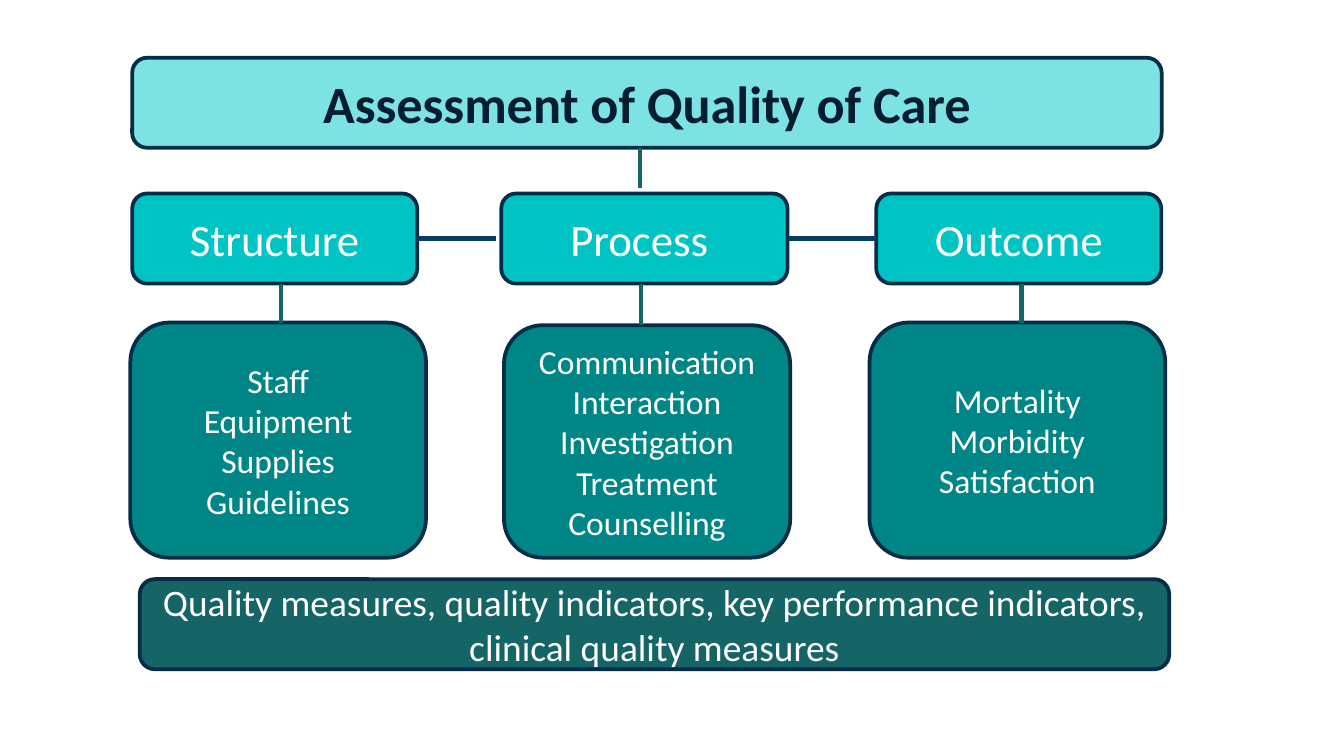
import dataclasses

import pptx
import pptx.dml.color
import pptx.enum.shapes
import pptx.enum.text
import pptx.oxml
import pptx.oxml.ns
import pptx.util

SHAPES = pptx.enum.shapes.MSO_SHAPE
STRAIGHT = pptx.enum.shapes.MSO_CONNECTOR.STRAIGHT
CELL = pptx.util.Inches(0.1)  # the slide is a grid 100 columns wide
LEFT, RIGHT = 1, 3  # connection sites


@dataclasses.dataclass(frozen=True)
class Theme:
    font: str = "Calibri"
    title_fill: str = "7CE2E4"
    heading_fill: str = "00C4C4"
    detail_fill: str = "008686"
    footer_fill: str = "156466"
    outline: str = "052D48"
    branch: str = "156466"
    sequence: str = "073D61"
    dark_text: str = "041E30"
    light_text: str = "FFFFFF"
    title_size: float = 28
    heading_size: float = 24
    footer_size: float = 20
    detail_size: float = 18
    outline_width: float = 2
    connector_width: float = 2.25


THEME = Theme()


def cells(*lengths):
    """Turn grid columns and rows into slide lengths."""
    return [pptx.util.Emu(round(length * CELL)) for length in lengths]


def rgb(color):
    return pptx.dml.color.RGBColor.from_string(color)


def write_text(shape, text, *, size, color=THEME.light_text, bold=False):
    """Write centred text, one paragraph for each line."""
    frame = shape.text_frame
    frame.word_wrap = True
    frame.auto_size = pptx.enum.text.MSO_AUTO_SIZE.NONE
    frame.vertical_anchor = pptx.enum.text.MSO_ANCHOR.MIDDLE
    frame.text = text
    for paragraph in frame.paragraphs:
        paragraph.alignment = pptx.enum.text.PP_ALIGN.CENTER
        for run in paragraph.runs:
            run.font.name = THEME.font
            run.font.size = pptx.util.Pt(size)
            run.font.bold = bold
            run.font.color.rgb = rgb(color)


def add_panel(slide, box, fill):
    """Add a rounded, outlined panel."""
    shape = slide.shapes.add_shape(SHAPES.FLOWCHART_ALTERNATE_PROCESS, *cells(*box))
    shape.shadow.inherit = False
    shape.fill.solid()
    shape.fill.fore_color.rgb = rgb(fill)
    shape.line.color.rgb = rgb(THEME.outline)
    shape.line.width = pptx.util.Pt(THEME.outline_width)
    return shape


def add_line(slide, start, end, color):
    connector = slide.shapes.add_connector(STRAIGHT, *cells(*start, *end))
    connector.line.color.rgb = rgb(color)
    connector.line.width = pptx.util.Pt(THEME.connector_width)
    properties = connector._element.spPr
    properties.append(pptx.oxml.parse_xml(
        f"<a:effectLst {pptx.oxml.ns.nsdecls('a')}/>"))
    return connector


def add_title(slide, box, text):
    """Set the title placeholder on a panel of the same size."""
    add_panel(slide, box, THEME.title_fill)
    title = slide.shapes.title
    title.left, title.top, title.width, title.height = cells(*box)
    write_text(title, text, size=THEME.title_size, color=THEME.dark_text, bold=True)
    slide.shapes._spTree.append(title._element)  # bring in front of the panel


def add_column(slide, heading_box, detail_box, branch_x, heading, details):
    """Add a heading, its detail panel and the branch between them."""
    heading_panel = add_panel(slide, heading_box, THEME.heading_fill)
    write_text(heading_panel, heading, size=THEME.heading_size)
    detail_panel = add_panel(slide, detail_box, THEME.detail_fill)
    write_text(detail_panel, details, size=THEME.detail_size)
    heading_bottom = heading_box[1] + heading_box[3]
    add_line(slide, (branch_x, heading_bottom), (branch_x, detail_box[1]), THEME.branch)
    return heading_panel


def add_sequence(slide, structure, process, outcome):
    """Join the three headings from left to right."""
    first = add_line(slide, (31, 17.75), (36.9, 17.75), THEME.sequence)
    first.begin_connect(structure, RIGHT)
    second = add_line(slide, (58.6, 17.75), (65.2, 17.75), THEME.sequence)
    second.begin_connect(process, RIGHT)
    second.end_connect(outcome, LEFT)


def add_footer(slide, box, text):
    write_text(add_panel(slide, box, THEME.footer_fill), text, size=THEME.footer_size)


def main():
    presentation = pptx.Presentation()
    presentation.slide_width = 100 * CELL
    presentation.slide_height = presentation.slide_width * 9 // 16
    slide = presentation.slides.add_slide(presentation.slide_layouts.get_by_name("Title Only"))

    # Title and its branch
    bar_width, bar_height, heading_top = 76.6, 6.7, 14.4
    add_title(slide, (9.84, 4.3, bar_width, bar_height), "Assessment of Quality of Care")
    add_line(slide, (47.6, 11), (47.6, 14), THEME.branch)

    # Columns: heading left and width, detail box, branch, texts
    columns = [
        (9.84, 21.2, (9.7, 24, 22, 17.5), 20.9, "Structure",
         "Staff\nEquipment\nSupplies\nGuidelines"),
        (37.3, 21.3, (37.5, 24.2, 21.3, 17.3), 47.7, "Process ",
         "Communication\nInteraction\nInvestigation\nTreatment\nCounselling"),
        (65.2, 21.2, (64.7, 24, 22, 17.5), 76, "Outcome",
         "Mortality Morbidity\nSatisfaction"),
    ]
    headings = [
        add_column(slide, (left, heading_top, width, bar_height), detail_box, branch_x,
                   heading, details)
        for left, width, detail_box, branch_x, heading, details in columns
    ]
    add_sequence(slide, *headings)

    # Footer
    add_footer(slide, (10.4, 43.1, bar_width, bar_height),
               "Quality measures, quality indicators, key performance indicators, "
               "clinical quality measures")

    presentation.save("out.pptx")


if __name__ == "__main__":
    main()
